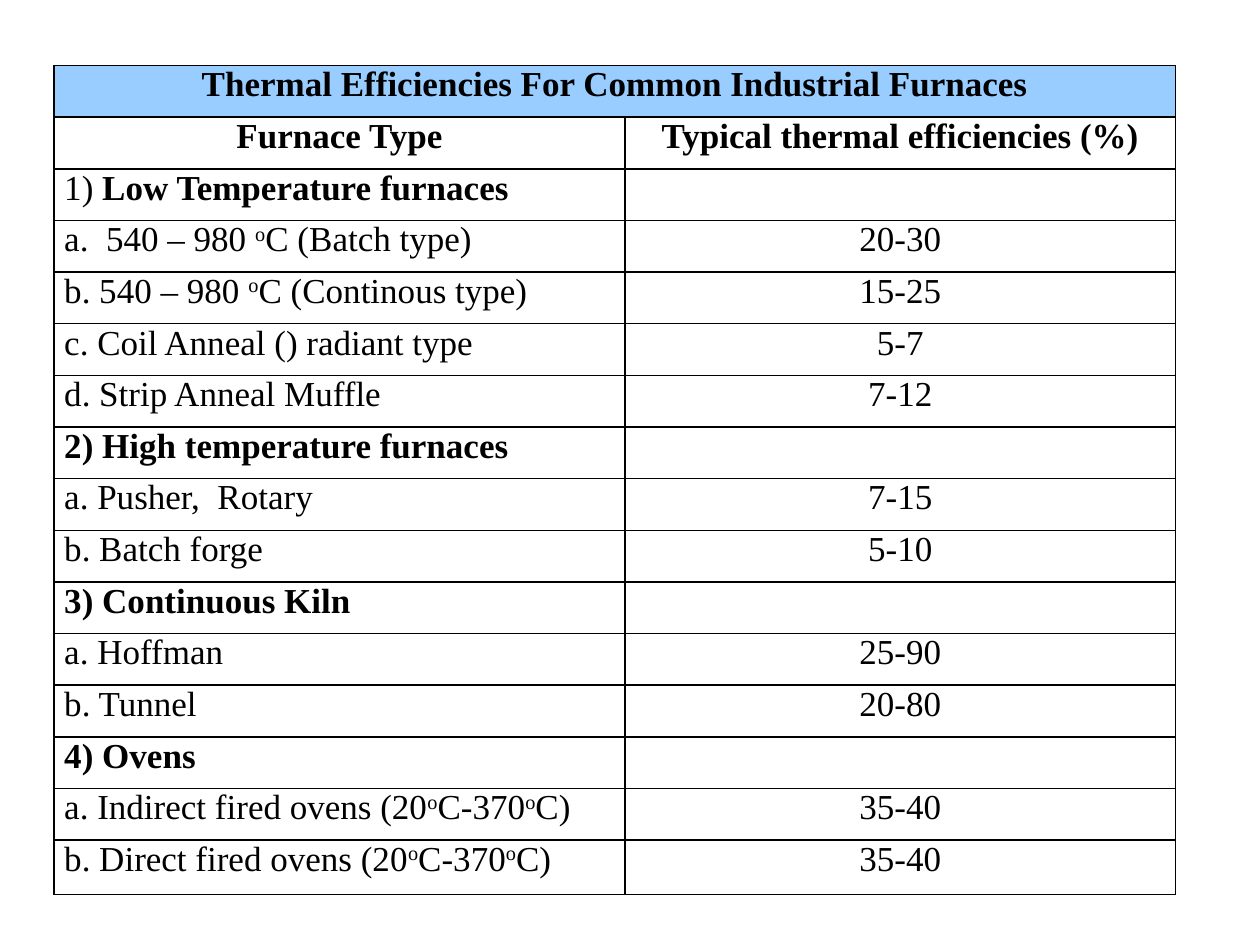
from lxml.etree import SubElement
from pptx import Presentation
from pptx.dml.color import RGBColor
from pptx.enum.text import PP_ALIGN
from pptx.oxml.ns import qn
from pptx.util import Inches, Pt

BLACK = RGBColor(0, 0, 0)
BLUE = RGBColor(0x99, 0xCC, 0xFF)
TITLE = "*Thermal Efficiencies For Common Industrial Furnaces"
HEADS = ("*Furnace Type", "*Typical thermal efficiencies (%)")
ROWS = [
    ("1) *Low Temperature furnaces", ""),
    ("a.  540 – 980 ^o^C (Batch type)", "20-30"),
    ("b. 540 – 980 ^o^C (Continous type)", "15-25"),
    ("c. Coil Anneal () radiant type", "5-7"),
    ("d. Strip Anneal Muffle", "7-12"),
    ("*2) High temperature furnaces", ""),
    ("a. Pusher,  Rotary", "7-15"),
    ("b. Batch forge", "5-10"),
    ("*3) Continuous Kiln", ""),
    ("a. Hoffman", "25-90"),
    ("b. Tunnel", "20-80"),
    ("*4) Ovens", ""),
    ("a. Indirect fired ovens (20^o^C-370^o^C)", "35-40"),
    ("b. Direct fired ovens (20^o^C-370^o^C)", "35-40"),
]


class Deck:
    """Style and current slide, with methods that draw a ruled table; * starts bold, ^ wraps superscript."""

    def __init__(self, slide, face="Times New Roman", size=20):
        self.slide, self.face, self.size = slide, face, size

    def label(self, cell, text, align):
        para = cell.text_frame.paragraphs[0]
        para.alignment = align
        font = para.font
        font.name, font.size, font.bold = self.face, Pt(self.size), text.startswith("*")
        font.color.rgb = BLACK
        lead, _, strong = text.partition("*")
        for part, bold in ((lead, False), (strong, True)):
            for i, piece in enumerate(part.split("^")):
                if not piece:
                    continue
                run = para.add_run()
                run.text = piece
                if lead and strong:
                    run.font.bold = bold
                if i % 2:
                    run.font._element.set("baseline", "30000")

    def rule(self, cell):
        props = cell._tc.get_or_add_tcPr()
        for i, side in enumerate(("lnL", "lnR", "lnT", "lnB")):
            line = SubElement(props, qn(f"a:{side}"), w=str(Pt(1)))
            fill = SubElement(line, qn("a:solidFill"))
            SubElement(fill, qn("a:srgbClr"), val=str(BLACK))
            props.insert(i, line)

    def cell(self, cell, text, align, fill=None):
        cell.margin_left = cell.margin_right = Inches(0.08)
        cell.margin_top = cell.margin_bottom = 0
        if fill is None:
            cell.fill.background()
        else:
            cell.fill.solid()
            cell.fill.fore_color.rgb = fill
        self.rule(cell)
        self.label(cell, text, align)

    def table(self, left, top, widths, high, last):
        count = len(ROWS) + 2
        tall = high * (count - 1) + last
        frame = self.slide.shapes.add_table(
            count, len(widths), Inches(left), Inches(top), Inches(sum(widths)), Inches(tall))
        grid = frame.table
        grid.first_row = grid.horz_banding = False
        for col, width in zip(grid.columns, widths):
            col.width = Inches(width)
        for row in grid.rows:
            row.height = Inches(high)
        grid.rows[count - 1].height = Inches(last)
        for r, texts in enumerate([(TITLE, ""), HEADS] + ROWS):
            for c, text in enumerate(texts):
                align = PP_ALIGN.JUSTIFY if r > 1 and c == 0 else PP_ALIGN.CENTER
                self.cell(grid.cell(r, c), text, align, None if r else BLUE)
        grid.cell(0, 0).merge(grid.cell(0, 1))


def main():
    show = Presentation()
    show.slide_width, show.slide_height = Inches(10), Inches(7.5)
    deck = Deck(show.slides.add_slide(show.slide_layouts[6]))
    deck.table(0.43, 0.52, (4.53, 4.37), 0.41, 0.43)
    show.save("out.pptx")


if __name__ == "__main__":
    main()
